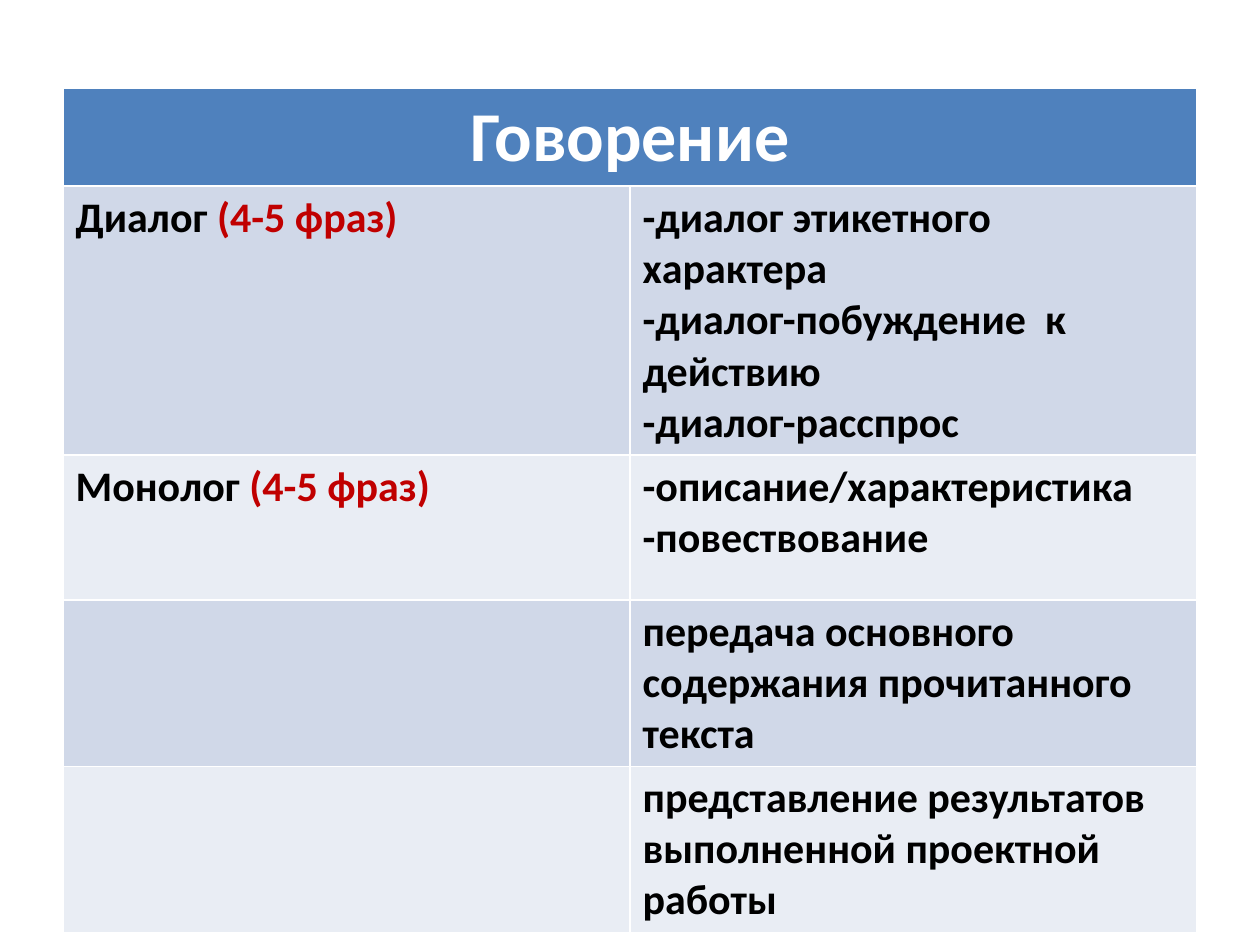
from pptx import Presentation
from pptx.dml.color import RGBColor
from pptx.enum.text import PP_ALIGN
from pptx.util import Cm, Pt

WHITE = RGBColor(0xFF, 0xFF, 0xFF)
BLACK = RGBColor(0x00, 0x00, 0x00)
RED = RGBColor(0xC0, 0x00, 0x00)
BLUE = RGBColor(0x4F, 0x81, 0xBD)
BANDS = (RGBColor(0xD0, 0xD8, 0xE8), RGBColor(0xE9, 0xED, 0xF4))

HEADING = "Говорение"
PHRASE_COUNT = "(4-5 фраз)"
SKILLS = [
    ("Диалог ", ["-диалог этикетного характера",
                 "-диалог-побуждение  к действию",
                 "-диалог-расспрос"]),
    ("Монолог ", ["-описание/характеристика", "-повествование"]),
    ("", ["передача основного содержания прочитанного текста"]),
    ("", ["представление результатов выполненной проектной работы"]),
]
ROW_HEIGHTS = (Cm(1.7), Cm(4.19), Cm(2.92), Cm(2.92), Cm(2.92))


def fill_cell(cell, fill, lines, size=24, color=BLACK):
    """Colour a cell and write one bold paragraph per line."""
    cell.fill.solid()
    cell.fill.fore_color.rgb = fill
    cell.text = "\n".join(lines)
    for para in cell.text_frame.paragraphs:
        para.font.name = "Calibri"
        para.font.size = Pt(size)
        para.font.bold = True
        para.font.color.rgb = color


def add_skills_table(page, left, top, width):
    """Place the speaking skills table in the given box."""
    frame = page.shapes.add_table(len(ROW_HEIGHTS), 2, left, top, width, sum(ROW_HEIGHTS))
    table = frame.table
    for row, height in zip(table.rows, ROW_HEIGHTS):
        row.height = height

    heading = table.cell(0, 0)
    heading.merge(table.cell(0, 1))
    fill_cell(heading, BLUE, [HEADING], size=40, color=WHITE)
    heading.text_frame.paragraphs[0].alignment = PP_ALIGN.CENTER

    for index, (skill, tasks) in enumerate(SKILLS):
        band = BANDS[index % len(BANDS)]
        skill_cell = table.cell(index + 1, 0)
        fill_cell(skill_cell, band, [skill])
        fill_cell(table.cell(index + 1, 1), band, tasks)
        if skill:
            span = skill_cell.text_frame.paragraphs[0].add_run()
            span.text = PHRASE_COUNT
            span.font.color.rgb = RED


def main():
    """Build and save the deck."""
    deck = Presentation()
    deck.slide_width, deck.slide_height = Cm(25.4), Cm(19.05)
    page = deck.slides.add_slide(deck.slide_layouts[6])
    add_skills_table(page, Cm(1.27), Cm(1.78), Cm(22.86))
    deck.save("out.pptx")


if __name__ == "__main__":
    main()
